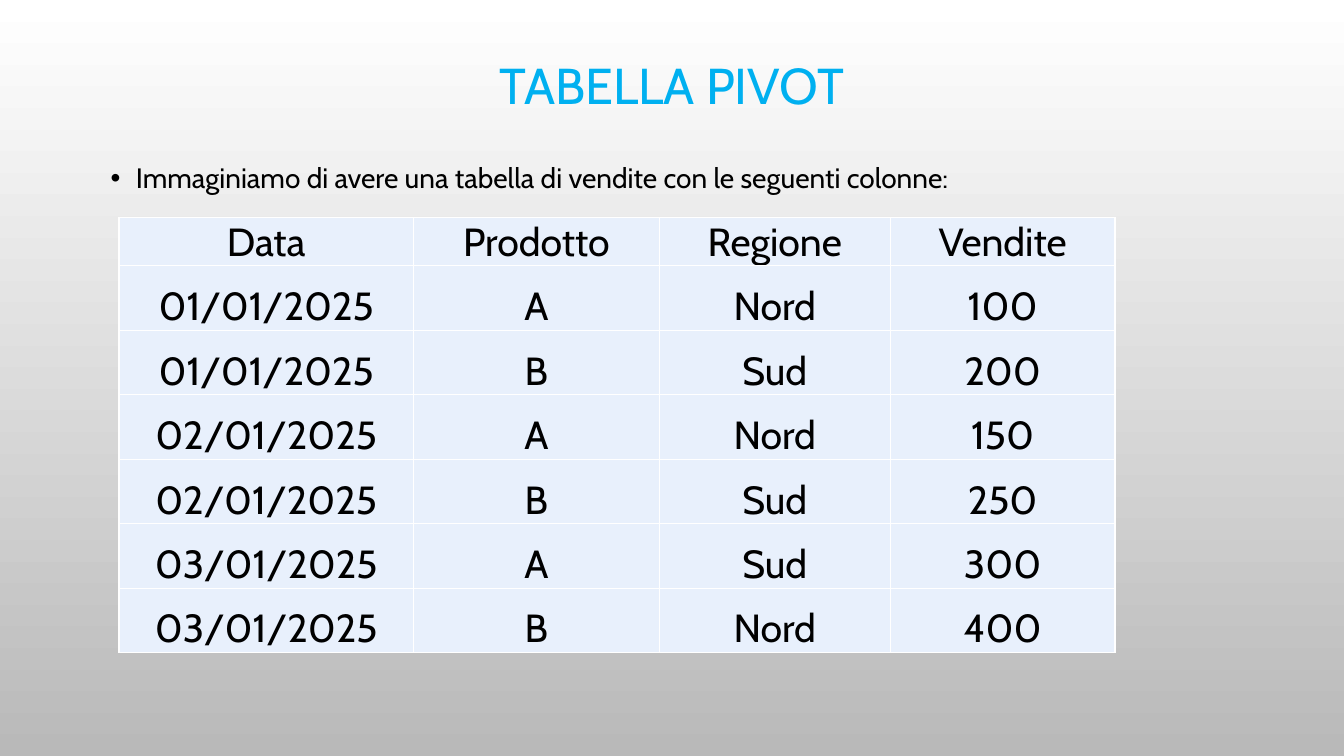
import pptx
import pptx.dml.color
import pptx.enum.text
import pptx.oxml.ns
import pptx.util
from lxml import etree

Inches = pptx.util.Inches
Pt = pptx.util.Pt
Align = pptx.enum.text.PP_ALIGN
Anchor = pptx.enum.text.MSO_ANCHOR

COLORS = {
    "title": "00B0F0",
    "text": "000000",
    "cell": "E8F0FC",
    "border": "FFFFFF",
    "sky": "FFFFFF",
    "ground": "B9B9B9",
}

SALES = [
    ("Data", "Prodotto", "Regione", "Vendite"),
    ("01/01/2025", "A", "Nord", "100"),
    ("01/01/2025", "B", "Sud", "200"),
    ("02/01/2025", "A", "Nord", "150"),
    ("02/01/2025", "B", "Sud", "250"),
    ("03/01/2025", "A", "Sud", "300"),
    ("03/01/2025", "B", "Nord", "400"),
]
COLUMN_WIDTHS = [2.92, 2.44, 2.29, 2.23]
HEADER_HEIGHT, ROW_HEIGHT = 0.35, 0.64


def rgb(name):
    return pptx.dml.color.RGBColor.from_string(COLORS[name])


def add_element(parent, tag, **attributes):
    return etree.SubElement(parent, pptx.oxml.ns.qn(tag), attributes)


def add_colored(parent, tag, name):
    """Add an element that holds one plain colour."""
    add_element(add_element(parent, tag), "a:srgbClr", val=COLORS[name])


class SlideBuilder:
    font = "Cabin"

    def __init__(self, page):
        self.page = page

    def background(self, top, bottom):
        fill = self.page.background.fill
        fill.gradient()
        fill.gradient_angle = 270
        for stop, name in zip(fill.gradient_stops, (top, bottom)):
            stop.color.rgb = rgb(name)

    def set_text(self, para, text, size, color):
        para.text = text
        for span in para.runs:
            span.font.name = self.font
            span.font.size = Pt(size)
            span.font.color.rgb = rgb(color)

    def text(self, left, top, width, height, text, size, color, anchor, spacing):
        box = self.page.shapes.add_textbox(
            Inches(left), Inches(top), Inches(width), Inches(height))
        frame = box.text_frame
        frame.word_wrap = True
        frame.vertical_anchor = anchor
        para = frame.paragraphs[0]
        para.line_spacing = spacing
        self.set_text(para, text, size, color)
        return para

    def bullet(self, para, indent):
        properties = para._p.get_or_add_pPr()
        properties.set("marL", str(Inches(indent)))
        properties.set("indent", str(-Inches(indent)))
        add_colored(properties, "a:buClr", "text")
        add_element(properties, "a:buFont", typeface="Arial")
        add_element(properties, "a:buChar", char="•")

    def cell(self, cell, text):
        cell.margin_left = cell.margin_top = cell.margin_right = Inches(0.01)
        cell.margin_bottom = 0
        cell.vertical_anchor = Anchor.BOTTOM
        for side in "LRTB":
            line = add_element(cell._tc.get_or_add_tcPr(), f"a:ln{side}", w=str(Pt(1)))
            add_colored(line, "a:solidFill", "border")
        cell.fill.solid()
        cell.fill.fore_color.rgb = rgb("cell")
        para = cell.text_frame.paragraphs[0]
        para.alignment = Align.CENTER
        self.set_text(para, text, 28, "text")

    def table(self, left, top, rows, widths, heights):
        table = self.page.shapes.add_table(
            len(rows), len(widths), Inches(left), Inches(top),
            Inches(sum(widths)), Inches(sum(heights))).table
        table.first_row = table.horz_banding = False
        for column, width in zip(table.columns, widths):
            column.width = Inches(width)
        for row, height, values in zip(table.rows, heights, rows):
            row.height = Inches(height)
            for cell, value in zip(row.cells, values):
                self.cell(cell, value)


def main():
    deck = pptx.Presentation()
    deck.slide_width, deck.slide_height = Inches(13.33), Inches(7.5)
    builder = SlideBuilder(deck.slides.add_slide(deck.slide_layouts[6]))
    builder.background("sky", "ground")

    title = builder.text(1, 0, 11.33, 1.75, "TABELLA PIVOT",
                         36, "title", Anchor.MIDDLE, 0.9)
    title.alignment = Align.CENTER
    intro = builder.text(
        1, 1.48, 11.33, 4.86,
        "Immaginiamo di avere una tabella di vendite con le seguenti colonne:",
        20, "text", Anchor.TOP, 1.2)
    builder.bullet(intro, 0.25)

    heights = [HEADER_HEIGHT] + [ROW_HEIGHT] * (len(SALES) - 1)
    builder.table(1.18, 2.16, SALES, COLUMN_WIDTHS, heights)
    deck.save("out.pptx")


if __name__ == "__main__":
    main()
